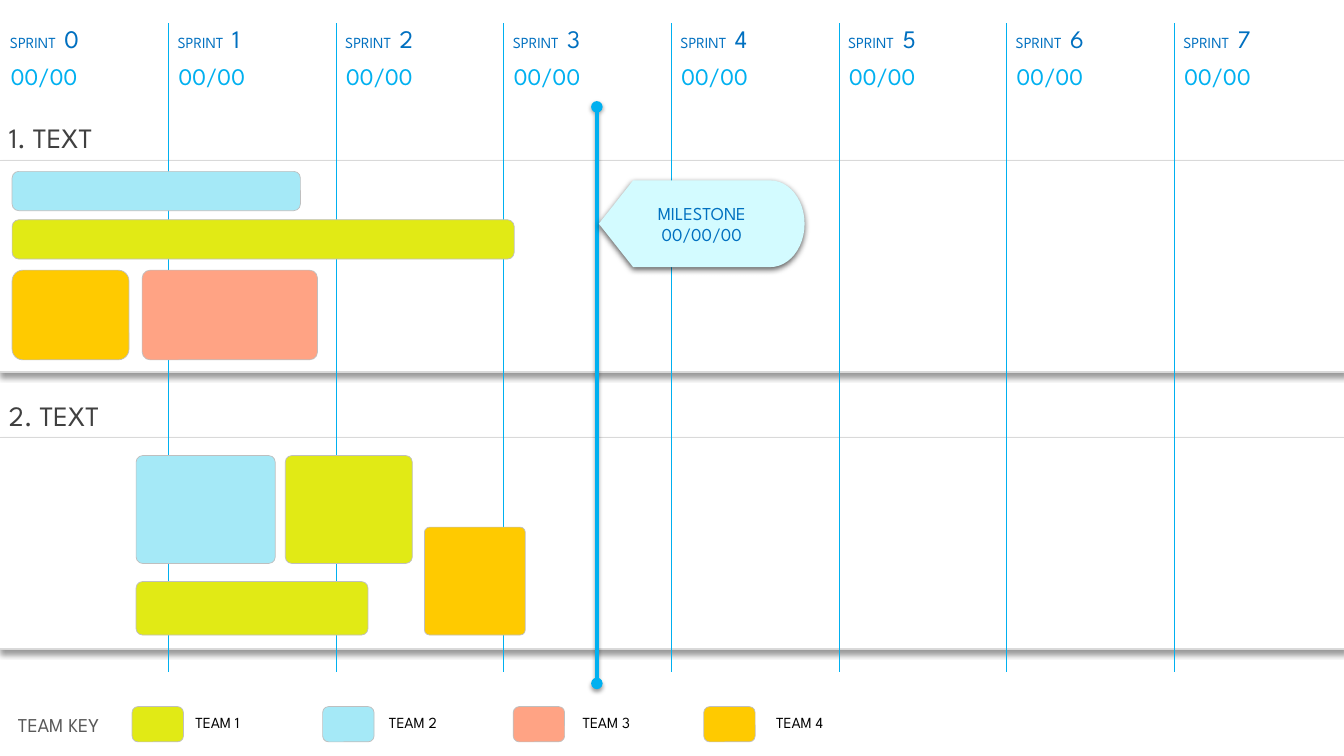
import pptx
import pptx.util
import pptx.dml.color
import pptx.enum.shapes
import pptx.enum.text
import pptx.oxml
import pptx.oxml.ns
from dataclasses import dataclass

Inches = pptx.util.Inches
SHAPE = pptx.enum.shapes.MSO_SHAPE
ANCHOR = pptx.enum.text.MSO_ANCHOR
ALIGN = pptx.enum.text.PP_ALIGN
GROW = pptx.enum.text.MSO_AUTO_SIZE.SHAPE_TO_FIT_TEXT


@dataclass(frozen=True)
class Theme:
    font: str = "League Spartan"
    white: str = "FFFFFF"
    black: str = "000000"
    heading: str = "404040"
    key: str = "595959"
    panel_line: str = "D9D9D9"
    bar_line: str = "BFBFBF"
    blue: str = "0070C0"
    sky: str = "00B0F0"
    flag: str = "D3FBFF"
    small: int = 11
    flag_size: int = 13
    key_size: int = 14
    date_size: int = 17
    number_size: int = 18
    heading_size: int = 20
    gap_size: int = 24


THEME = Theme()

# Content
SPRINTS = range(8)
SPRINT_DATE = "00/00"
TEAMS = {"TEAM 1": "E1EA15", "TEAM 2": "A5E9F7", "TEAM 3": "FFA384", "TEAM 4": "FFCA00"}
KEY_TITLE = "TEAM KEY"
MILESTONE = ["MILESTONE", "00/00/00"]
SECTIONS = [("1. TEXT", 1.15), ("2. TEXT", 3.9)]  # heading, top
# team, (left, top, width, height), corner radius ratio
TASKS = [
    ("TEAM 2", (0.12, 1.7, 2.86, 0.39), 0.17),
    ("TEAM 1", (0.12, 2.18, 4.98, 0.39), 0.17),
    ("TEAM 4", (0.12, 2.68, 1.16, 0.89), 0.12),
    ("TEAM 3", (1.41, 2.68, 1.74, 0.89), 0.09),
    ("TEAM 2", (1.35, 4.52, 1.38, 1.07), 0.06),
    ("TEAM 1", (1.35, 5.77, 2.3, 0.53), 0.12),
    ("TEAM 1", (2.83, 4.52, 1.26, 1.07), 0.06),
    ("TEAM 4", (4.21, 5.23, 1, 1.07), 0.05),
]
# opacity in percent, blur and distance in points
PANEL_SHADOW = (40, 4, 3)
LINE_SHADOW = (38, 3.1, 1.6)
FLAG_SHADOW = (63, 4.5, 1.5)

# Layout
COLUMN = 13.3 / len(SPRINTS)
HEADING_HEIGHT = 0.44
PANEL = (-0.01, 13.35, 2.1)  # left, width, height
SWATCH_LEFT, SWATCH_STEP = 1.31, 1.89
LABEL_LEFT, LABEL_STEP = 1.84, 1.92


def rgb(color):
    return pptx.dml.color.RGBColor.from_string(color)


def set_shadow(item, shadow=None):
    """Give an item a downward shadow, or none; call after its line is set."""
    effects = pptx.oxml.parse_xml(f"<a:effectLst {pptx.oxml.ns.nsdecls('a')}/>")
    if shadow:
        opacity, blur, distance = shadow
        effects.append(pptx.oxml.parse_xml(
            f'<a:outerShdw {pptx.oxml.ns.nsdecls("a")} blurRad="{pptx.util.Pt(blur)}" '
            f'dist="{pptx.util.Pt(distance)}" dir="5400000" algn="t" rotWithShape="0">'
            f'<a:srgbClr val="{THEME.black}"><a:alpha val="{opacity * 1000}"/></a:srgbClr>'
            '</a:outerShdw>'))
    item._element.spPr.append(effects)


def add_spans(para, spans):
    """Add (text, size, color) spans to a paragraph."""
    for text, size, color in spans:
        span = para.add_run()
        span.text = text
        span.font.color.rgb = rgb(color)
        for name, value in {"name": THEME.font, "size": pptx.util.Pt(size)}.items():
            setattr(span.font, name, value)


def add_text(page, place, spans, **frame_format):
    box = page.shapes.add_textbox(*map(Inches, place))
    for name, value in {"word_wrap": True, "auto_size": GROW, **frame_format}.items():
        setattr(box.text_frame, name, value)
    add_spans(box.text_frame.paragraphs[0], spans)


def add_block(page, kind, place, fill, line=None, shadow=None):
    block = page.shapes.add_shape(kind, *map(Inches, place))
    block.fill.solid()
    block.fill.fore_color.rgb = rgb(fill)
    if line:
        color, width = line
        block.line.color.rgb = rgb(color)
        block.line.width = pptx.util.Pt(width)
    else:
        block.line.fill.background()
    set_shadow(block, shadow)
    return block


def add_vertical(page, x, top, bottom, width, shadow=None, dots=False):
    line = page.shapes.add_connector(
        pptx.enum.shapes.MSO_CONNECTOR.STRAIGHT, *map(Inches, (x, top, x, bottom)))
    line.line.color.rgb = rgb(THEME.sky)
    line.line.width = pptx.util.Pt(width)
    if dots:
        for end in ("headEnd", "tailEnd"):
            line.line._get_or_add_ln().append(pptx.oxml.parse_xml(
                f'<a:{end} {pptx.oxml.ns.nsdecls("a")} type="oval"/>'))
    set_shadow(line, shadow)


def add_panels(page):
    left, width, height = PANEL
    for _, top in SECTIONS:
        add_block(page, SHAPE.RECTANGLE, (left, top + HEADING_HEIGHT, width, height),
                  THEME.white, (THEME.panel_line, 1), PANEL_SHADOW)


def add_sprints(page):
    for sprint in SPRINTS:
        left = sprint * COLUMN
        if sprint:
            add_vertical(page, left + 0.01, 0.23, 6.67, 0.5)
        add_text(page, (left, 0.1, COLUMN, 0.5),
                 [("SPRINT", THEME.small, THEME.blue), (" ", THEME.gap_size, THEME.blue),
                  (str(sprint), THEME.number_size, THEME.blue)])
        add_text(page, (left + 0.01, 0.61, COLUMN, 0.29),
                 [(SPRINT_DATE, THEME.date_size, THEME.sky)],
                 vertical_anchor=ANCHOR.MIDDLE, margin_top=0, margin_right=0, margin_bottom=0)


def add_headings(page):
    for heading, top in SECTIONS:
        add_text(page, (-0.01, top, 8, HEADING_HEIGHT),
                 [(heading, THEME.heading_size, THEME.heading)])


def add_team_key(page):
    add_text(page, (0.08, 7.02, 1.11, 0.34), [(KEY_TITLE, THEME.key_size, THEME.key)],
             word_wrap=False)
    for index, (team, color) in enumerate(TEAMS.items()):
        add_block(page, SHAPE.ROUNDED_RECTANGLE,
                  (SWATCH_LEFT + index * SWATCH_STEP, 7.01, 0.51, 0.35),
                  color, (THEME.bar_line, 0.5))
        add_text(page, (LABEL_LEFT + index * LABEL_STEP, 7.03, 0.73, 0.29),
                 [(team, THEME.small, THEME.black)], word_wrap=False)


def add_tasks(page):
    for team, place, radius in TASKS:
        bar = add_block(page, SHAPE.ROUNDED_RECTANGLE, place, TEAMS[team], (THEME.bar_line, 0.5))
        bar.adjustments[0] = radius


def add_milestone(page):
    add_vertical(page, 5.92, 1.06, 6.78, 2.75, LINE_SHADOW, dots=True)
    flag = add_block(page, SHAPE.FLOWCHART_DISPLAY, (5.94, 1.79, 2.04, 0.86),
                     THEME.flag, shadow=FLAG_SHADOW)
    frame = flag.text_frame
    for side in ("left", "top", "right", "bottom"):
        setattr(frame, f"margin_{side}", 0)
    frame.vertical_anchor = ANCHOR.MIDDLE
    for index, text in enumerate(MILESTONE):
        para = frame.add_paragraph() if index else frame.paragraphs[0]
        para.alignment = ALIGN.CENTER
        add_spans(para, [(text, THEME.flag_size, THEME.blue)])


def main():
    deck = pptx.Presentation()
    deck.slide_width, deck.slide_height = Inches(13.33), Inches(7.5)
    page = deck.slides.add_slide(deck.slide_layouts[6])
    for add_part in (add_panels, add_sprints, add_headings, add_team_key, add_tasks, add_milestone):
        add_part(page)
    deck.save("out.pptx")


if __name__ == "__main__":
    main()
